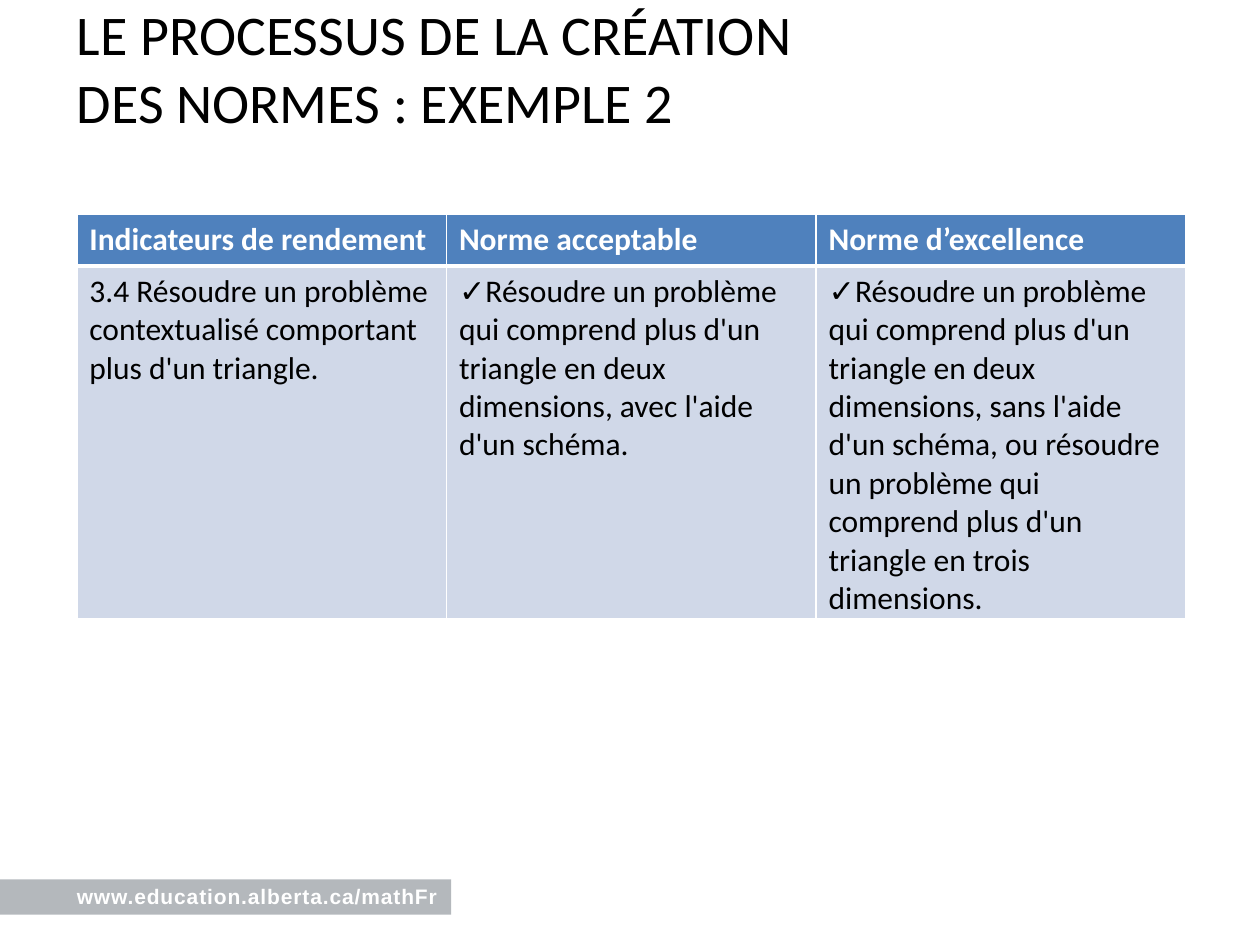
from lxml import etree
from pptx import Presentation
from pptx.dml.color import RGBColor
from pptx.enum.shapes import MSO_SHAPE
from pptx.oxml.ns import qn
from pptx.util import Inches, Pt

RECTANGLE = MSO_SHAPE.RECTANGLE
BLANK_LAYOUT = 6

COLORS = {
    "text": "000000",
    "white": "FFFFFF",
    "header": "4F81BD",
    "body": "D0D8E8",
    "footer": "6A737B",
}

LEFT_MARGIN = 0.61
TABLE_ROWS = [
    ["Indicateurs de rendement", "Norme acceptable", "Norme d’excellence"],
    [
        "3.4 Résoudre un problème contextualisé comportant plus d'un triangle.",
        "✓Résoudre un problème qui comprend plus d'un triangle en deux "
        "dimensions, avec l'aide d'un schéma.",
        "✓Résoudre un problème qui comprend plus d'un triangle en deux "
        "dimensions, sans l'aide d'un schéma, ou résoudre un problème qui "
        "comprend plus d'un triangle en trois dimensions.",
    ],
]


def rgb(name):
    return RGBColor.from_string(COLORS[name])


class SlideBuilder:
    def __init__(self, slide):
        self.slide = slide
        self.font = "Calibri"

    def add_run(self, paragraph, text, size, color, bold=False, font=None, spacing=None):
        """Add a styled run; spacing is the letter spacing in points."""
        run = paragraph.add_run()
        run.text = text
        run.font.name = font or self.font
        run.font.size = Pt(size)
        run.font.bold = bold
        run.font.color.rgb = rgb(color)
        if spacing:
            run.font._element.set("spc", str(round(spacing * 100)))

    def add_band(self, left, top, width, height, color, opacity):
        """Add a borderless rectangle; opacity is a percentage."""
        shape = self.slide.shapes.add_shape(
            RECTANGLE, Inches(left), Inches(top), Inches(width), Inches(height))
        shape.shadow.inherit = False
        shape.line.fill.background()
        shape.fill.solid()
        shape.fill.fore_color.rgb = rgb(color)
        color_element = shape._element.spPr.find(".//" + qn("a:srgbClr"))
        etree.SubElement(color_element, qn("a:alpha"), val=str(opacity * 1000))

    def add_text(self, left, top, width, height, text, **run_style):
        shape = self.slide.shapes.add_textbox(
            Inches(left), Inches(top), Inches(width), Inches(height))
        frame = shape.text_frame
        frame.word_wrap = True
        frame.margin_left = frame.margin_top = 0
        frame.margin_right = frame.margin_bottom = 0
        self.add_run(frame.paragraphs[0], text, **run_style)

    def set_borders(self, cell, top, bottom):
        """Draw white cell borders; top and bottom are widths in points."""
        properties = cell._tc.get_or_add_tcPr()
        for side, width in (("L", 1), ("R", 1), ("T", top), ("B", bottom)):
            line = etree.SubElement(properties, qn(f"a:ln{side}"), w=str(Pt(width)))
            fill = etree.SubElement(line, qn("a:solidFill"))
            etree.SubElement(fill, qn("a:srgbClr"), val=COLORS["white"])

    def add_table(self, left, top, width, row_heights, rows):
        table = self.slide.shapes.add_table(
            len(rows), len(rows[0]), Inches(left), Inches(top),
            Inches(width), Inches(sum(row_heights))).table
        for row, height in zip(table.rows, row_heights):
            row.height = Inches(height)
        for row_index, texts in enumerate(rows):
            is_header = row_index == 0
            for column_index, text in enumerate(texts):
                cell = table.cell(row_index, column_index)
                self.set_borders(cell, *((1, 3) if is_header else (3, 1)))
                cell.fill.solid()
                cell.fill.fore_color.rgb = rgb("header" if is_header else "body")
                self.add_run(cell.text_frame.paragraphs[0], text, 18,
                             "white" if is_header else "text", bold=is_header)


def main():
    presentation = Presentation()
    presentation.slide_width = Inches(10)
    presentation.slide_height = Inches(7.5)
    slide = presentation.slides.add_slide(presentation.slide_layouts[BLANK_LAYOUT])
    builder = SlideBuilder(slide)

    builder.add_band(0, 6.98, 3.58, 0.28, "footer", opacity=50)
    builder.add_text(LEFT_MARGIN, 7.01, 2.97, 0.2, "www.education.alberta.ca/mathFr",
                     size=12, color="white", bold=True, font="Arial", spacing=0.5)
    builder.add_text(LEFT_MARGIN, 0, 6.46, 1.07,
                     "LE PROCESSUS DE LA CRÉATION DES NORMES : EXEMPLE 2",
                     size=32, color="text")
    builder.add_table(LEFT_MARGIN, 1.7, 8.8, [0.41, 2.8], TABLE_ROWS)

    presentation.save("out.pptx")


if __name__ == "__main__":
    main()
